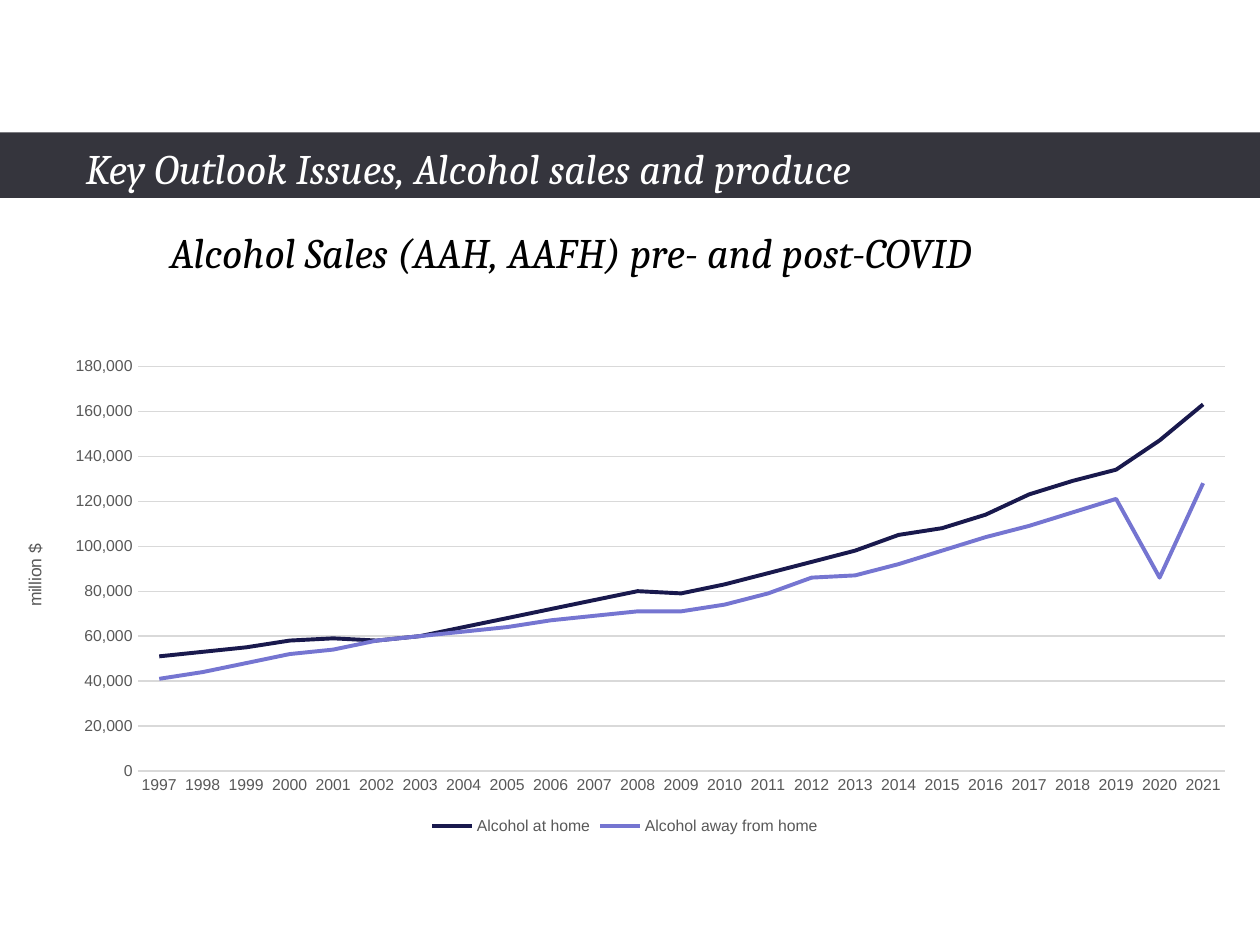
from lxml.etree import SubElement
from pptx import Presentation
from pptx.chart.data import CategoryChartData
from pptx.dml.color import RGBColor
from pptx.enum.chart import XL_CHART_TYPE, XL_LEGEND_POSITION, XL_TICK_MARK
from pptx.enum.shapes import MSO_SHAPE
from pptx.enum.text import MSO_ANCHOR, PP_ALIGN
from pptx.oxml.ns import qn
from pptx.util import Inches, Pt

BAND = RGBColor(0x35, 0x35, 0x3D)
WHITE = RGBColor(0xFF, 0xFF, 0xFF)
BLACK = RGBColor(0, 0, 0)
GRAY = RGBColor(0x59, 0x59, 0x59)
GRID = RGBColor(0xD9, 0xD9, 0xD9)
NAVY = RGBColor(0x19, 0x19, 0x4D)
LAVENDER = RGBColor(0x75, 0x75, 0xD1)

TITLE = "Key Outlook Issues, Alcohol sales and produce"
SUBTITLE = "Alcohol Sales (AAH, AAFH) pre- and post-COVID"
UNIT = "million $"
YEARS = [str(year) for year in range(1997, 2022)]
SALES_IN_THOUSANDS = [
    ("Alcohol at home", NAVY,
     [51, 53, 55, 58, 59, 58, 60, 64, 68, 72, 76, 80, 79,
      83, 88, 93, 98, 105, 108, 114, 123, 129, 134, 147, 163]),
    ("Alcohol away from home", LAVENDER,
     [41, 44, 48, 52, 54, 58, 60, 62, 64, 67, 69, 71, 71,
      74, 79, 86, 87, 92, 98, 104, 109, 115, 121, 86, 128]),
]
PLOT_LAYOUT = [("xMode", "edge"), ("yMode", "edge"), ("x", 0.11), ("y", 0.04),
               ("w", 0.87), ("h", 0.82)]


def place(shape, left, top, width, height):
    shape.left, shape.top = Inches(left), Inches(top)
    shape.width, shape.height = Inches(width), Inches(height)


def write_heading(shape, text, color):
    frame = shape.text_frame
    frame.word_wrap = True
    frame.vertical_anchor = MSO_ANCHOR.TOP
    frame.text = text
    paragraph = frame.paragraphs[0]
    paragraph.alignment = PP_ALIGN.LEFT
    style_font(paragraph.font, 24, color, "Cambria")
    paragraph.font.italic = True


def style_font(font, size, color, name="Arial"):
    font.size = Pt(size)
    font.name = name
    font.bold = False
    font.color.rgb = color


def style_line(line, color, width):
    line.color.rgb = color
    line.width = Pt(width)


def add_sales_chart(slide):
    data = CategoryChartData(number_format="#,##0")
    data.categories = YEARS
    for name, _, thousands in SALES_IN_THOUSANDS:
        data.add_series(name, [value * 1000 for value in thousands])
    chart = slide.shapes.add_chart(
        XL_CHART_TYPE.LINE, Inches(0), Inches(2.75), Inches(9.92), Inches(3.92), data).chart
    chart.has_title = False
    style_font(chart.font, 10, BLACK)

    plot = chart.plots[0]
    plot.vary_by_categories = False
    for series, (_, color, _) in zip(plot.series, SALES_IN_THOUSANDS):
        series.smooth = False
        style_line(series.format.line, color, 2.25)

    for axis in (chart.category_axis, chart.value_axis):
        axis.major_tick_mark = axis.minor_tick_mark = XL_TICK_MARK.NONE
        style_font(axis.tick_labels.font, 9, GRAY)
    style_line(chart.category_axis.format.line, GRID, 0.75)

    sales_axis = chart.value_axis
    sales_axis.minimum_scale, sales_axis.maximum_scale = 0, 180000
    sales_axis.major_unit = 20000
    sales_axis.format.line.fill.background()
    style_line(sales_axis.major_gridlines.format.line, GRID, 0.75)
    sales_axis.tick_labels.number_format = "#,##0"
    sales_axis.tick_labels.number_format_is_linked = False
    unit = sales_axis.axis_title.text_frame
    unit.text = UNIT
    unit._txBody.bodyPr.set("rot", "-5400000")
    style_font(unit.paragraphs[0].font, 10, GRAY)

    chart.has_legend = True
    chart.legend.position = XL_LEGEND_POSITION.BOTTOM
    chart.legend.include_in_layout = False
    style_font(chart.legend.font, 9, GRAY)

    plot_area = chart._chartSpace.chart.plotArea
    layout = plot_area.find(qn("c:layout"))
    if layout is None:
        layout = SubElement(plot_area, qn("c:layout"))
        plot_area.insert(0, layout)
    manual = SubElement(layout, qn("c:manualLayout"))
    SubElement(manual, qn("c:layoutTarget")).set("val", "inner")
    for tag, value in PLOT_LAYOUT:
        SubElement(manual, qn(f"c:{tag}")).set("val", str(value))


def main():
    deck = Presentation()
    deck.slide_width, deck.slide_height = Inches(10), Inches(7.5)
    slide = deck.slides.add_slide(deck.slide_layouts[5])
    shapes = slide.shapes

    band = shapes.add_shape(
        MSO_SHAPE.RECTANGLE, Inches(0), Inches(1.05), Inches(10.01), Inches(0.52))
    band.shadow.inherit = False
    band.fill.solid()
    band.fill.fore_color.rgb = BAND
    band.line.fill.background()
    shapes.title._element.addprevious(band._element)

    add_sales_chart(slide)

    subtitle = shapes.add_textbox(Inches(1.25), Inches(1.75), Inches(7.67), Inches(0.5))
    write_heading(subtitle, SUBTITLE, BLACK)
    place(shapes.title, 0.58, 1.08, 8, 0.5)
    write_heading(shapes.title, TITLE, WHITE)

    deck.save("out.pptx")


if __name__ == "__main__":
    main()
